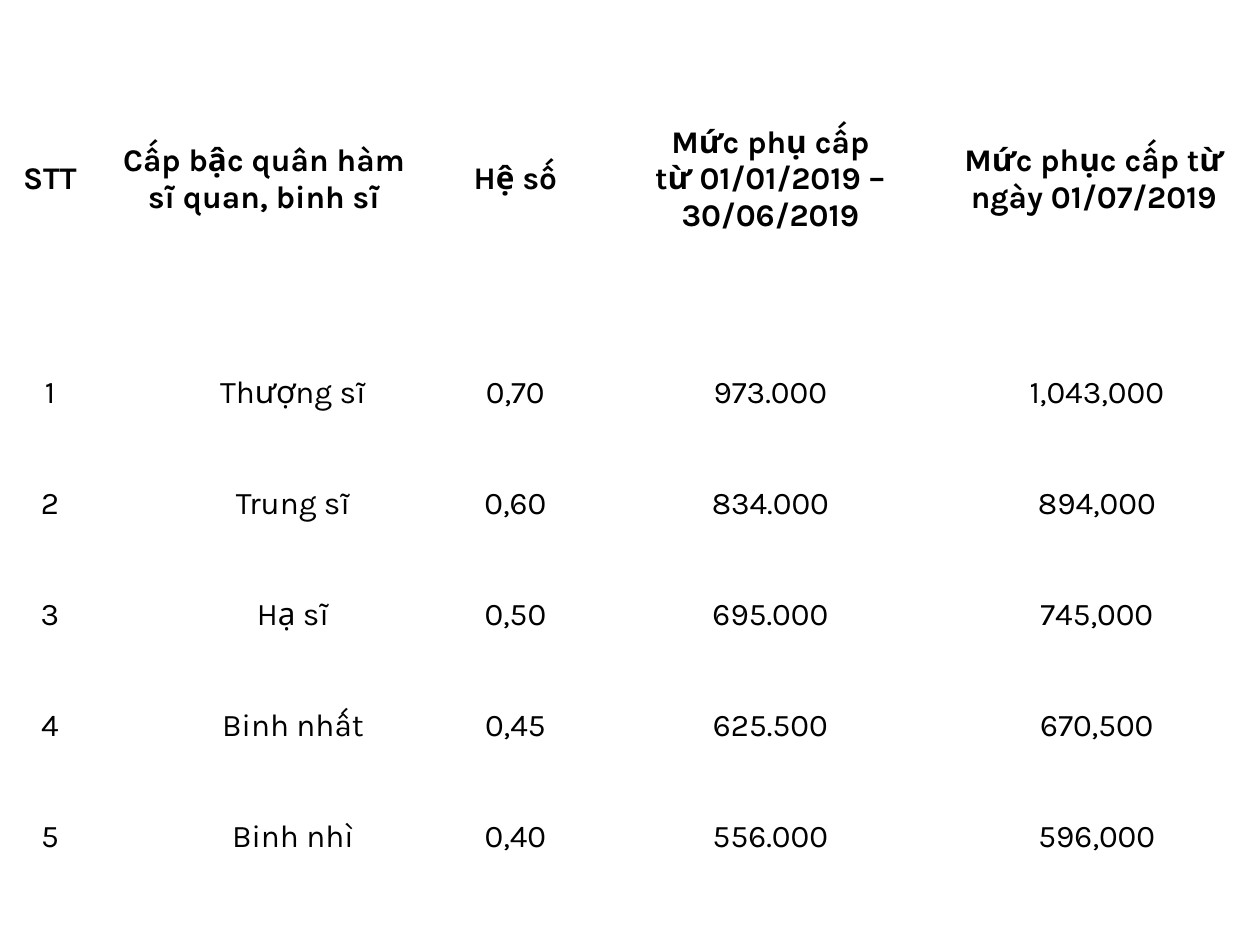
from pptx import Presentation
from pptx.dml.color import RGBColor
from pptx.enum.text import MSO_ANCHOR, PP_ALIGN
from pptx.util import Pt

PX = 7257  # EMU in one px, 126 px to the inch
WHITE = RGBColor(0xFF, 0xFF, 0xFF)
BLACK = RGBColor(0x00, 0x00, 0x00)

COLUMN_WIDTHS = [100, 328, 175, 335, 312]
COLUMN_INDENTS = [0, 58, 0, 0, 6]
HEADER_HEIGHT, ROW_HEIGHT = 317, 111
INSET = 1

HEADERS = [
    "STT",
    "Cấp bậc quân hàm\vsĩ quan, binh sĩ",
    "Hệ số",
    "Mức phụ cấp\vtừ 01/01/2019 – 30/06/2019",
    "Mức phục cấp từ ngày 01/07/2019",
]
RANKS = [
    ("Thượng sĩ", "0,70", "973.000", "1,043,000"),
    ("Trung sĩ", "0,60", "834.000", "894,000"),
    ("Hạ sĩ", "0,50", "695.000", "745,000"),
    ("Binh nhất", "0,45", "625.500", "670,500"),
    ("Binh nhì", "0,40", "556.000", "596,000"),
]


class SlideBuilder:
    font_name = "Karla"
    font_size = Pt(18)

    def __init__(self, slide):
        self.slide = slide

    def background(self, color):
        fill = self.slide.background.fill
        fill.solid()
        fill.fore_color.rgb = color

    def table(self, left, top, widths, heights, rows):
        frame = self.slide.shapes.add_table(
            len(heights), len(widths), left * PX, top * PX,
            sum(widths) * PX, sum(heights) * PX)
        table = frame.table
        table.horz_banding = False
        for column, width in zip(table.columns, widths):
            column.width = width * PX
        for row, height in zip(table.rows, heights):
            row.height = height * PX
        for i, texts in enumerate(rows):
            for j, text in enumerate(texts):
                indent = COLUMN_INDENTS[j] if i else 0
                self.cell(table.cell(i, j), text, bold=i == 0, indent=indent)

    def cell(self, cell, text, bold, indent):
        cell.fill.solid()
        cell.fill.fore_color.rgb = WHITE
        cell.vertical_anchor = MSO_ANCHOR.MIDDLE
        cell.margin_left = (INSET + indent) * PX
        cell.margin_right = cell.margin_top = cell.margin_bottom = INSET * PX
        para = cell.text_frame.paragraphs[0]
        para.text = text
        para.alignment = PP_ALIGN.CENTER
        for span in para.runs:
            span.font.name = self.font_name
            span.font.size = self.font_size
            span.font.bold = bold
            span.font.color.rgb = BLACK


def main():
    deck = Presentation()
    deck.slide_width, deck.slide_height = 1260 * PX, 945 * PX
    page = SlideBuilder(deck.slides.add_slide(deck.slide_layouts[6]))
    page.background(WHITE)

    # Allowance table: a header, then one numbered row for each rank
    rows = [HEADERS] + [(str(n), *rank) for n, rank in enumerate(RANKS, 1)]
    heights = [HEADER_HEIGHT] + [ROW_HEIGHT] * len(RANKS)
    page.table(0, 21, COLUMN_WIDTHS, heights, rows)

    deck.save("out.pptx")


if __name__ == "__main__":
    main()
